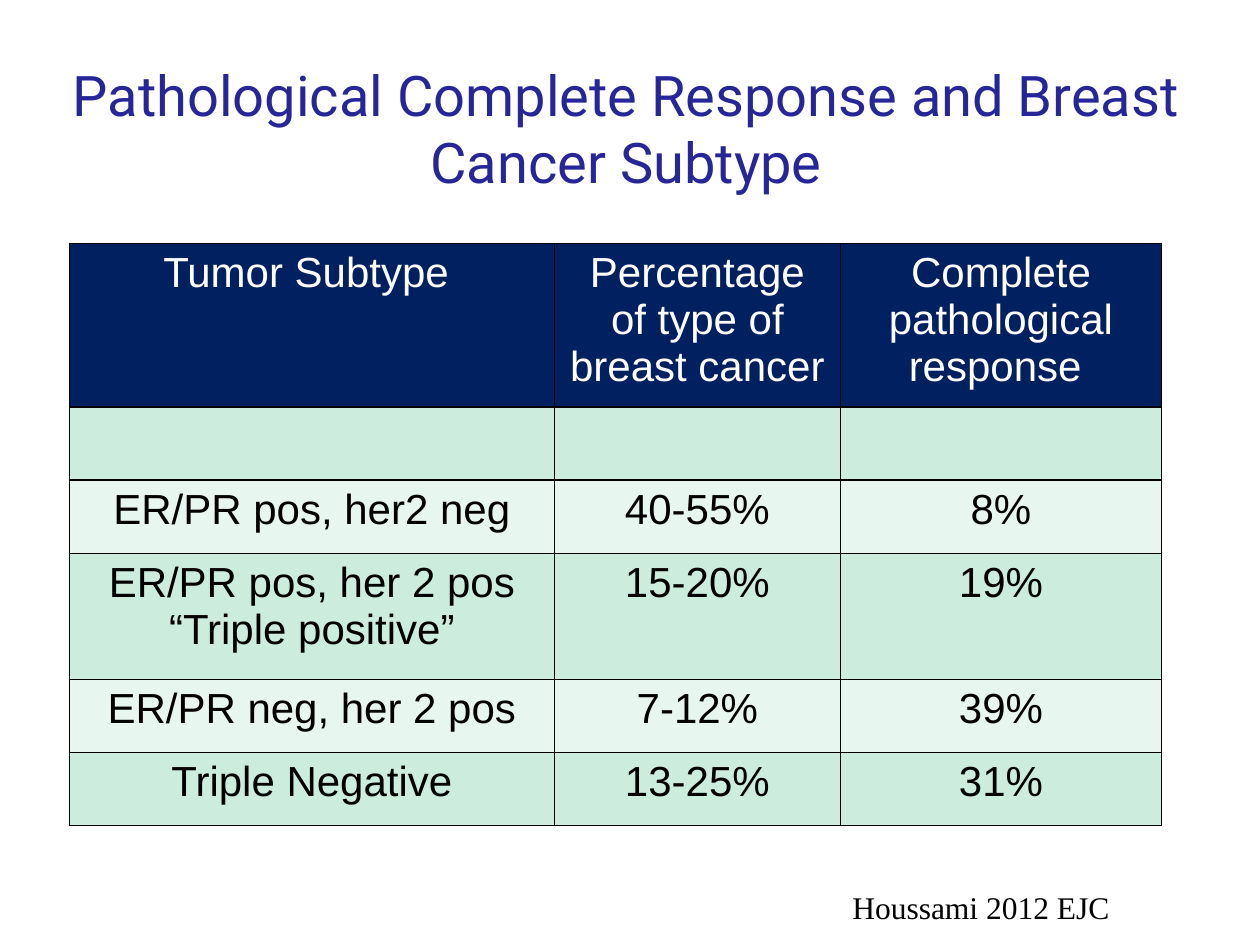
from lxml import etree
from pptx import Presentation
from pptx.dml.color import RGBColor
from pptx.enum.text import MSO_ANCHOR, PP_ALIGN
from pptx.oxml.ns import qn
from pptx.util import Pt

LEFT, CENTER = PP_ALIGN.LEFT, PP_ALIGN.CENTER
TOP, MIDDLE = MSO_ANCHOR.TOP, MSO_ANCHOR.MIDDLE

WHITE = RGBColor(0xFF, 0xFF, 0xFF)
BLACK = RGBColor(0, 0, 0)
INDIGO = RGBColor(0x26, 0x26, 0x99)
NAVY = RGBColor(0x00, 0x20, 0x60)
MINT = RGBColor(0xCC, 0xEC, 0xDE)
PALE = RGBColor(0xE7, 0xF6, 0xEF)

COLS = [277.2, 163.4, 183.6]
ROWS = [
    (93.6, ["Tumor Subtype ", "Percentage of type of breast cancer",
            "Complete pathological response "]),
    (41.8, ["", "", ""]),
    (41.8, ["ER/PR pos, her2 neg", "40-55%", "8%"]),
    (72, ["ER/PR pos, her 2 pos\n“Triple positive”", "15-20%", "19%"]),
    (41.8, ["ER/PR neg, her 2 pos", "7-12%", "39%"]),
    (41.8, ["Triple Negative", "13-25%", "31%"]),
]


def write(frame, text, font="Arial", size=24, color=BLACK, align=CENTER):
    frame.text = text
    for para in frame.paragraphs:
        para.alignment = align
        para.font.name = font
        para.font.size = Pt(size)
        for run in para.runs:
            run.font.name = font
            run.font.size = Pt(size)
            run.font.color.rgb = color


def add_text(slide, box, text, wrap=True, anchor=TOP, **style):
    shape = slide.shapes.add_textbox(*map(Pt, box))
    frame = shape.text_frame
    frame.word_wrap = wrap
    frame.vertical_anchor = anchor
    write(frame, text, **style)
    return shape


def add_lines(cell):
    props = cell._tc.get_or_add_tcPr()
    for side in ("a:lnL", "a:lnR", "a:lnT", "a:lnB"):
        line = etree.SubElement(props, qn(side), w=str(Pt(1)))
        fill = etree.SubElement(line, qn("a:solidFill"))
        etree.SubElement(fill, qn("a:srgbClr"), val=str(BLACK))


def add_grid(slide, left, top):
    high = sum(height for height, _ in ROWS)
    table = slide.shapes.add_table(
        len(ROWS), len(COLS), Pt(left), Pt(top), Pt(sum(COLS)), Pt(high)).table
    for col, width in zip(table.columns, COLS):
        col.width = Pt(width)
    for r, (height, texts) in enumerate(ROWS):
        table.rows[r].height = Pt(height)
        back = NAVY if r == 0 else MINT if r % 2 else PALE
        for c, text in enumerate(texts):
            cell = table.cell(r, c)
            add_lines(cell)
            cell.fill.solid()
            cell.fill.fore_color.rgb = back
            write(cell.text_frame, text, color=BLACK if r else WHITE)


def main():
    deck = Presentation()
    deck.slide_width, deck.slide_height = Pt(720), Pt(540)
    slide = deck.slides.add_slide(deck.slide_layouts[6])
    title = add_text(slide, (34, 28, 648, 90),
                     "Pathological Complete Response and Breast Cancer Subtype",
                     anchor=MIDDLE, font="Roboto", size=32, color=INDIGO)
    title.fill.solid()
    title.fill.fore_color.rgb = WHITE
    add_grid(slide, 39.6, 139)
    add_text(slide, (480, 504, 163, 29), "Houssami 2012 EJC", wrap=False,
             font="Times New Roman", size=18, align=LEFT)
    deck.save("out.pptx")


if __name__ == "__main__":
    main()
